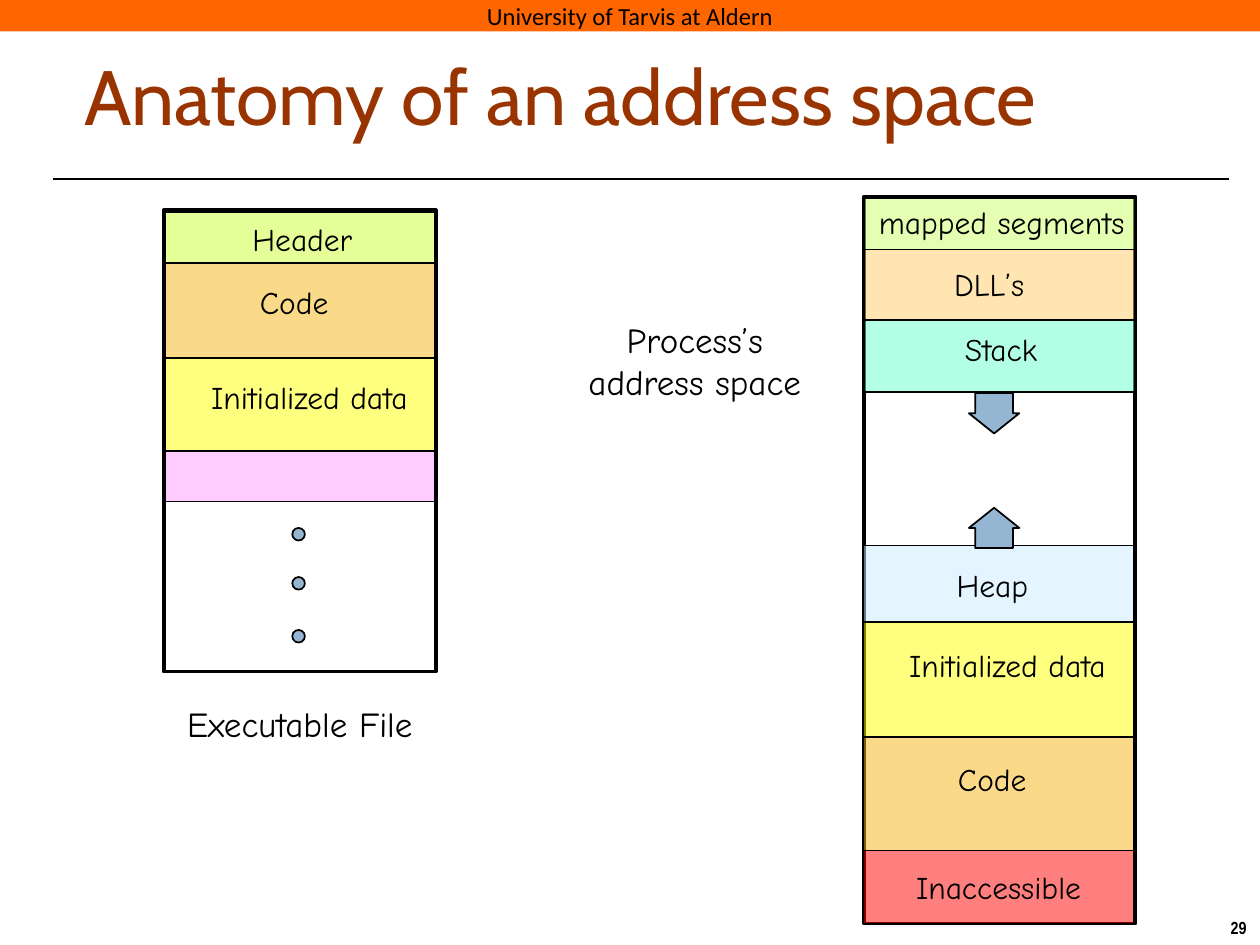
from lxml.etree import SubElement
from pptx import Presentation
from pptx.dml.color import RGBColor
from pptx.enum.shapes import MSO_CONNECTOR as Connector, MSO_SHAPE as Preset
from pptx.enum.text import MSO_ANCHOR as Anchor, MSO_AUTO_SIZE as AutoSize, PP_ALIGN as Align
from pptx.oxml.ns import qn
from pptx.util import Inches, Pt

COLORS = {
    "black": "000000", "banner": "FF6600", "title": "993300", "marker": "94B6D2",
    "code": "F7B615", "data": "FFFF00", "header": "CCFF33", "section": "FFCCFF",
    "mapped": "CCFF66", "library": "FFCC66", "stack": "66FFCC", "heap": "CCECFF",
    "blocked": "FF0000",
}

presentation = Presentation()
presentation.slide_width = Inches(10)
presentation.slide_height = Inches(7.5)
COLUMN = presentation.slide_width / 100
ROW = presentation.slide_height / 75
slide = presentation.slides.add_slide(presentation.slide_layouts[6])
shapes = slide.shapes


def add_box(preset, left, top, width, height, fill=None, line=1, alpha=100):
    shape = shapes.add_shape(preset, round(left * COLUMN), round(top * ROW),
                             round(width * COLUMN), round(height * ROW))
    shape.shadow.inherit = False
    if fill:
        shape.fill.solid()
        shape.fill.fore_color.rgb = RGBColor.from_string(COLORS[fill])
        if alpha < 100:
            color = shape.fill._xPr.find(qn("a:solidFill"))[0]
            SubElement(color, qn("a:alpha"), val=str(alpha * 1000))
    else:
        shape.fill.background()
    if line:
        shape.line.color.rgb = RGBColor.from_string(COLORS["black"])
        shape.line.width = Pt(line)
    else:
        shape.line.fill.background()
    return shape


def add_text(lines, left, top, width, height, size=18, font="Comic Neue", color="black",
             bold=False, align=Align.CENTER, anchor=Anchor.TOP, grow=True):
    box = shapes.add_textbox(round(left * COLUMN), round(top * ROW),
                             round(width * COLUMN), round(height * ROW))
    frame = box.text_frame
    frame.word_wrap = not grow
    frame.auto_size = AutoSize.SHAPE_TO_FIT_TEXT if grow else AutoSize.NONE
    frame.vertical_anchor = anchor
    for number, line in enumerate(lines):
        paragraph = frame.add_paragraph() if number else frame.paragraphs[0]
        paragraph.alignment = align
        run = paragraph.add_run()
        run.text = line
        run.font.size = Pt(size)
        run.font.name = font
        run.font.bold = bold
        run.font.color.rgb = RGBColor.from_string(COLORS[color])


banner = add_box(Preset.RECTANGLE, 0, 0, 100, 2.5, "banner", line=None)
banner_frame = banner.text_frame
banner_frame.word_wrap = False
banner_frame.margin_left = banner_frame.margin_right = 0
banner_frame.margin_top = banner_frame.margin_bottom = 0
banner_frame.vertical_anchor = Anchor.MIDDLE
paragraph = banner_frame.paragraphs[0]
paragraph.alignment = Align.CENTER
run = paragraph.add_run()
run.text = "University of Tarvis at Aldern"
run.font.size = Pt(14)
run.font.name = "Calibri"
run.font.color.rgb = RGBColor.from_string(COLORS["black"])

rule = shapes.add_connector(Connector.STRAIGHT, round(4.2 * COLUMN), round(14.2 * ROW),
                            round(97.5 * COLUMN), round(14.2 * ROW))
rule.line.color.rgb = RGBColor.from_string(COLORS["black"])
rule.line.width = Pt(1.5)
SubElement(rule._element.spPr, qn("a:effectLst"))

add_text(["Anatomy of an address space"], 5.7, 3.3, 80.1, 8.5, 44, "Cabin", "title",
         align=Align.LEFT, anchor=Anchor.MIDDLE, grow=False)
add_text(["29"], 96.6, 72.3, 3.4, 2.7, 10, "Arial Narrow", bold=True)

add_box(Preset.RECTANGLE, 68.6, 15.6, 21.5, 57.7, line=2.25)

# (left, top, bands of (label, fill, height, label left, label drop, label width))
stacks = [
    (13.1, 16.8, [
        ("Header", "header", 4.1, 18.7, 0.2, 10.6),
        ("Code", "code", 7.5, 19.5, 1.1, 7.7),
        ("Initialized data", "data", 7.4, 14.5, 1.1, 20.1),
        (None, "section", 4, 0, 0, 0),
    ]),
    (68.6, 15.7, [
        ("mapped segments", "mapped", 4.1, 68.3, -0.1, 22.4),
        ("DLL’s", "library", 5.6, 74.4, 0.7, 8.2),
        ("Stack", "stack", 5.7, 75, 0.3, 8.9),
    ]),
    (68.5, 43.3, [
        ("Heap", "heap", 6.1, 74.8, 1.1, 7.9),
        ("Initialized data", "data", 9.1, 69.9, 1.4, 20.1),
        ("Code", "code", 9, 74.9, 1.3, 7.7),
        ("Inaccessible", "blocked", 5.8, 70.8, 0.9, 16.9),
    ]),
]
for left, top, bands in stacks:
    for label, fill, height, label_left, label_drop, label_width in bands:
        add_box(Preset.RECTANGLE, left, top, 21.5, height, fill, alpha=50 if label else 100)
        if label:
            add_text([label], label_left, top + label_drop, label_width, 4.5)
        top += height

for preset, top in [(Preset.DOWN_ARROW, 31.2), (Preset.UP_ARROW, 40.3)]:
    arrow = add_box(preset, 76.9, top, 4, 3.2, "marker")
    arrow.adjustments[0] = 0.75
    arrow.adjustments[1] = 0.5

add_box(Preset.RECTANGLE, 13, 16.7, 21.6, 36.6, line=2.25)
for top in (41.9, 45.8, 50):
    add_box(Preset.OVAL, 23.2, top, 1, 1, "marker")

add_text(["Executable File"], 12.8, 55.3, 22, 4.9, 20)
add_text(["Process’s", "address space"], 45, 24.8, 20.3, 8.8, 20)

presentation.save("out.pptx")
